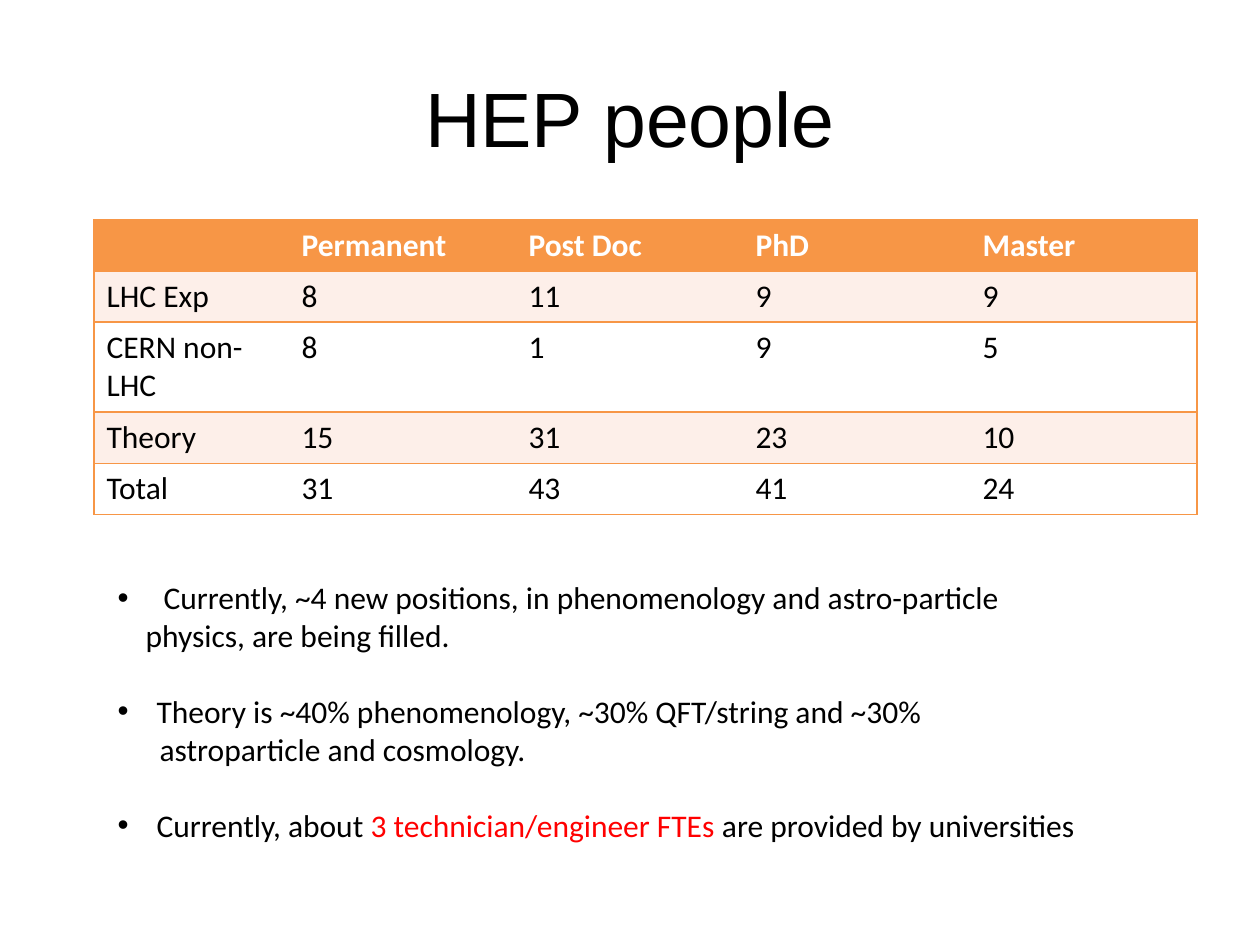
from lxml.etree import SubElement
from pptx import Presentation
from pptx.dml.color import RGBColor
from pptx.enum.text import MSO_ANCHOR as Anchor, MSO_AUTO_SIZE as AutoSize, PP_ALIGN as Align
from pptx.oxml.ns import qn
from pptx.util import Emu, Pt

SCALE = 914400 / 126
COLORS = {
    "black": "000000",
    "white": "FFFFFF",
    "orange": "F79646",
    "peach": "FDEFE9",
    "red": "FF0000",
}
PEOPLE = [
    ["", "Permanent", "Post Doc", "PhD", "Master"],
    ["LHC Exp", "8", "11", "9", "9"],
    ["CERN non-LHC", "8", "1", "9", "5"],
    ["Theory", "15", "31", "23", "10"],
    ["Total", "31", "43", "41", "24"],
]
ROW_HEIGHTS = [51, 51, 90, 51, 51]
LABEL_WIDTH = 195
LINE_HEIGHT = 38
NOTES = [
    (46, [("Currently, ~4 new positions, in phenomenology and astro-particle", "black")],
     28, "physics, are being filled."),
    (39, [("Theory is ~40% phenomenology, ~30% QFT/string and ~30%", "black")],
     42, "astroparticle and cosmology."),
    (39, [("Currently, about ", "black"), ("3 technician/engineer FTEs", "red"),
          (" are provided by universities", "black")], 0, ""),
]


def px(length):
    return Emu(round(length * SCALE))


def color(name):
    return RGBColor.from_string(COLORS[name])


def place(shape, box):
    shape.left, shape.top, shape.width, shape.height = map(px, box)


def add_run(para, text, ink, size=18, font="Calibri", bold=False):
    span = para.add_run()
    span.text = text
    span.font.size = Pt(size)
    span.font.name = font
    span.font.bold = bold
    span.font.color.rgb = color(ink)


def add_title(page, box):
    title = page.shapes.title
    place(title, box)
    title.text_frame.vertical_anchor = Anchor.MIDDLE
    para = title.text_frame.paragraphs[0]
    para.alignment = Align.CENTER
    add_run(para, "HEP people", "black", size=44, font="Arial")


def set_borders(cell, visible_sides):
    properties = cell._tc.get_or_add_tcPr()
    for side in "LRTB":
        line = SubElement(properties, qn(f"a:ln{side}"), w=str(Pt(1)))
        if side in visible_sides:
            fill = SubElement(line, qn("a:solidFill"))
            SubElement(fill, qn("a:srgbClr"), val=COLORS["orange"])
        else:
            SubElement(line, qn("a:noFill"))


def add_people_table(page, box):
    row_count, column_count = len(PEOPLE), len(PEOPLE[0])
    table = page.shapes.add_table(row_count, column_count, *map(px, box)).table
    value_width = (box[2] - LABEL_WIDTH) // (column_count - 1)
    for index, column in enumerate(table.columns):
        column.width = px(value_width if index else LABEL_WIDTH)
    for row_index, (row, height) in enumerate(zip(table.rows, ROW_HEIGHTS)):
        row.height = px(height)
        header = row_index == 0
        fill = "orange" if header else "peach" if row_index % 2 else "white"
        for index, cell in enumerate(row.cells):
            sides = "TB" + ("L" if index == 0 else "R" if index == column_count - 1 else "")
            set_borders(cell, sides)
            cell.fill.solid()
            cell.fill.fore_color.rgb = color(fill)
            text = PEOPLE[row_index][index]
            if text:
                ink = "white" if header else "black"
                add_run(cell.text_frame.paragraphs[0], text, ink, bold=header)


def format_note(para, margin, bullet, gap):
    para.space_before = px(gap)
    para.alignment = Align.LEFT
    properties = para._p.get_or_add_pPr()
    properties.set("marL", str(px(margin)))
    properties.set("indent", str(px(-margin if bullet else 0)))
    if bullet:
        SubElement(properties, qn("a:buFont"), typeface="Arial")
        SubElement(properties, qn("a:buChar"), char="•")
    else:
        SubElement(properties, qn("a:buNone"))


def add_notes_list(page, box):
    body = page.placeholders[1]
    place(body, box)
    frame = body.text_frame
    frame.word_wrap = True
    frame.auto_size = AutoSize.NONE
    frame.vertical_anchor = Anchor.TOP
    for index, (margin, spans, next_margin, next_line) in enumerate(NOTES):
        para = frame.add_paragraph() if index else frame.paragraphs[0]
        format_note(para, margin, True, LINE_HEIGHT if index else 0)
        for text, ink in spans:
            add_run(para, text, ink)
        if next_line:
            para = frame.add_paragraph()
            format_note(para, next_margin, False, 0)
            add_run(para, next_line, "black")


def main():
    deck = Presentation()
    deck.slide_width, deck.slide_height = px(1260), px(945)
    page = deck.slides.add_slide(deck.slide_layouts[1])
    add_title(page, (63, 38, 1134, 158))
    add_people_table(page, (94, 220, 1103, sum(ROW_HEIGHTS)))
    add_notes_list(page, (105, 572, 1192, 318))
    deck.save("out.pptx")


if __name__ == "__main__":
    main()
